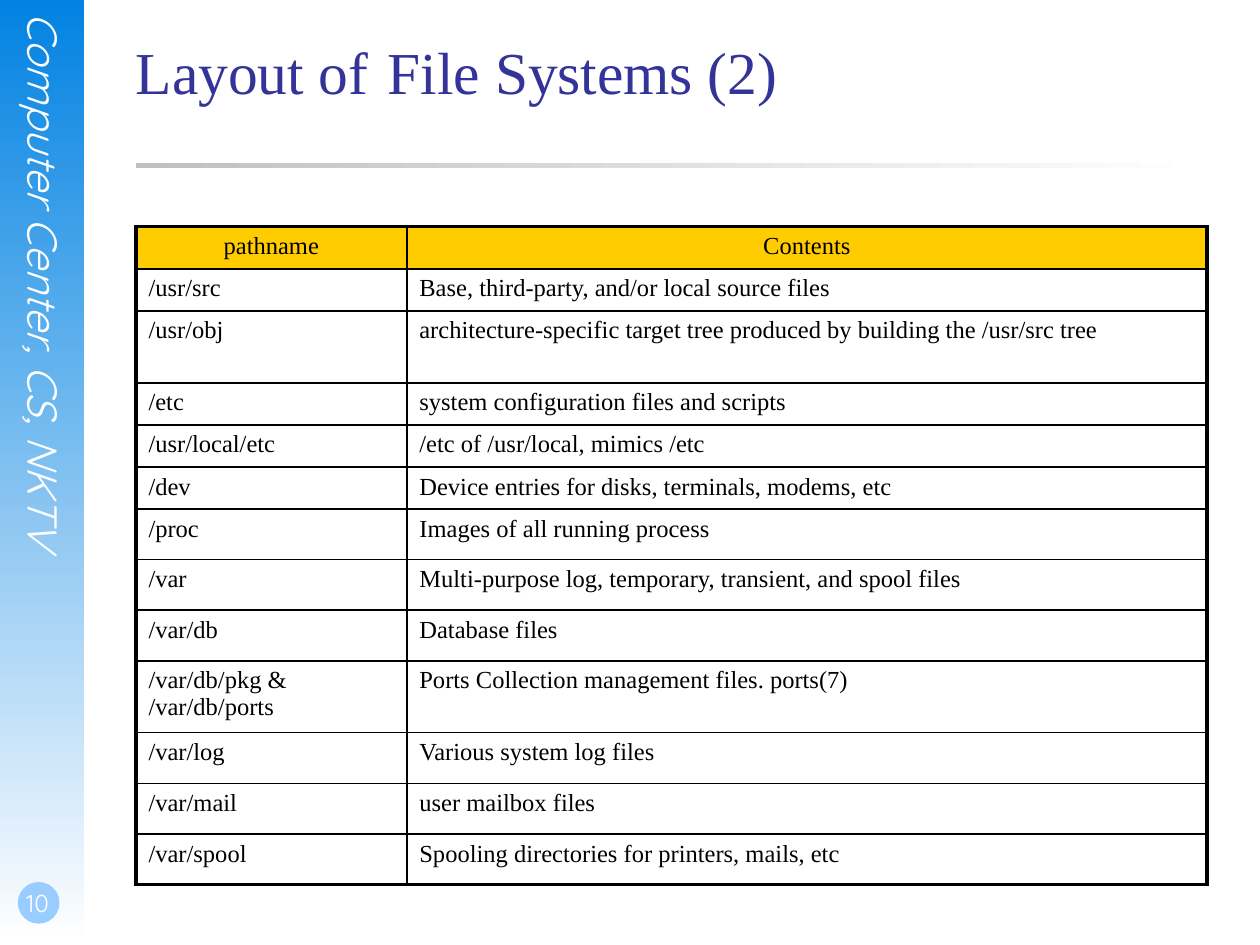
"""Build a slide with a table of file system paths and their contents."""
from lxml import etree
from pptx import Presentation
from pptx import util as u
from pptx.dml.color import RGBColor
from pptx.enum import shapes, text
from pptx.oxml.ns import qn

COLORS = {"sky": "0282E2", "white": "FFFFFF", "badge": "99CCFF", "rule": "C0C0C0",
          "title": "333399", "header": "FFCC00", "ink": "000000"}
SANS, SERIF = "Quicksand", "Times New Roman"
TITLE = "Layout of \tFile Systems (2)"
SIDE_LABEL = "Computer Center, CS, NKTV"
PAGE_NUMBER = "10"
LOW, MIDDLE, TALL = 0.84, 1.02, 1.45
COLUMN_WIDTHS = (5.46, 16.13)
ROWS = [
    (LOW, "pathname", "Contents"),
    (LOW, "/usr/src", "Base, third-party, and/or local source files"),
    (TALL, "/usr/obj", "architecture-specific target tree produced by building the /usr/src tree"),
    (LOW, "/etc", "system configuration files and scripts"),
    (LOW, "/usr/local/etc", "/etc of /usr/local, mimics /etc"),
    (LOW, "/dev", "Device entries for disks, terminals, modems, etc"),
    (MIDDLE, "/proc", "Images of all running process"),
    (MIDDLE, "/var", "Multi-purpose log, temporary, transient, and spool files"),
    (MIDDLE, "/var/db", "Database files"),
    (TALL, "/var/db/pkg & /var/db/ports", "Ports Collection management files. ports(7)"),
    (MIDDLE, "/var/log", "Various system log files"),
    (MIDDLE, "/var/mail", "user mailbox files"),
    (MIDDLE, "/var/spool", "Spooling directories for printers, mails, etc"),
]
LEFT, WIDTH = 2.74, sum(COLUMN_WIDTHS)


def rgb(name):
    return RGBColor.from_string(COLORS[name])


def place(*lengths):
    return [u.Cm(length) for length in lengths]


def add_panel(page, kind, area, colors, angle=0):
    panel = page.shapes.add_shape(kind, *place(*area))
    panel.shadow.inherit = False
    panel.line.fill.background()
    if len(colors) == 1:
        panel.fill.solid()
        panel.fill.fore_color.rgb = rgb(colors[0])
        return
    panel.fill.gradient()
    panel.fill.gradient_angle = angle
    for stop, color, position in zip(panel.fill.gradient_stops, colors, (0, 1)):
        stop.color.rgb = rgb(color)
        stop.position = position


def style(para, font, size, color, align=text.PP_ALIGN.LEFT):
    para.alignment = align
    para.font.name = font
    para.font.size = u.Pt(size)
    para.font.color.rgb = rgb(color)


def add_text(page, area, words, font, size, color, margins=(0, 0, 0, 0), **options):
    box = page.shapes.add_textbox(*place(*area))
    frame = box.text_frame
    frame.word_wrap = True
    (frame.margin_left, frame.margin_top,
     frame.margin_right, frame.margin_bottom) = place(*margins)
    para = frame.paragraphs[0]
    para.text = words
    style(para, font, size, color, **options)
    return frame


def set_borders(cell, widths):
    properties = cell._tc.get_or_add_tcPr()
    for index, (side, width) in enumerate(zip("LRTB", widths)):
        line = etree.Element(qn(f"a:ln{side}"), w=str(u.Pt(width)))
        fill = etree.SubElement(line, qn("a:solidFill"))
        etree.SubElement(fill, qn("a:srgbClr"), val=COLORS["ink"])
        properties.insert(index, line)


def add_path_table(page):
    height = sum(row[0] for row in ROWS)
    table = page.shapes.add_table(len(ROWS), len(COLUMN_WIDTHS),
                                  *place(LEFT, 4.57, WIDTH, height)).table
    table.first_row = table.horz_banding = False
    for column, width in zip(table.columns, COLUMN_WIDTHS):
        column.width = u.Cm(width)
    last_row, last_column = len(ROWS) - 1, len(COLUMN_WIDTHS) - 1
    for r, (row_height, *words) in enumerate(ROWS):
        table.rows[r].height = u.Cm(row_height)
        for c, word in enumerate(words):
            cell = table.cell(r, c)
            cell.text = word
            align = text.PP_ALIGN.CENTER if r == 0 else text.PP_ALIGN.LEFT
            style(cell.text_frame.paragraphs[0], SERIF, 14, "ink", align)
            if r == 0:
                cell.fill.solid()
                cell.fill.fore_color.rgb = rgb("header")
            else:
                cell.fill.background()
            outer = (c == 0, c == last_column, r == 0, r == last_row)
            set_borders(cell, [2.25 if edge else 1 for edge in outer])


def main():
    deck = Presentation()
    deck.slide_width, deck.slide_height = place(25.4, 19.05)
    page = deck.slides.add_slide(deck.slide_layouts[6])
    kinds = shapes.MSO_SHAPE

    add_panel(page, kinds.RECTANGLE, (0, 0, 1.7, 19.05), ("sky", "white"), 270)
    label = add_text(page, (0.38, 0.25, 1.02, 12.98), SIDE_LABEL, SANS, 24, "white")
    label.paragraphs[0].font.italic = True
    label._txBody.bodyPr.set("vert", "eaVert")

    add_panel(page, kinds.OVAL, (0.36, 17.78, 0.84, 0.84), ("badge",))
    number = add_text(page, (0, 17.35, 1.47, 1.27), PAGE_NUMBER, SANS, 14, "white",
                      margins=(0.05, 0, 0, 0.13), align=text.PP_ALIGN.CENTER)
    number.vertical_anchor = text.MSO_ANCHOR.BOTTOM

    add_panel(page, kinds.RECTANGLE, (LEFT, 3.28, WIDTH, 0.1), ("rule", "white"))
    add_text(page, (LEFT, 0.71, WIDTH, 3.18), TITLE, SERIF, 34, "title")
    add_path_table(page)
    deck.save("out.pptx")


if __name__ == "__main__":
    main()
